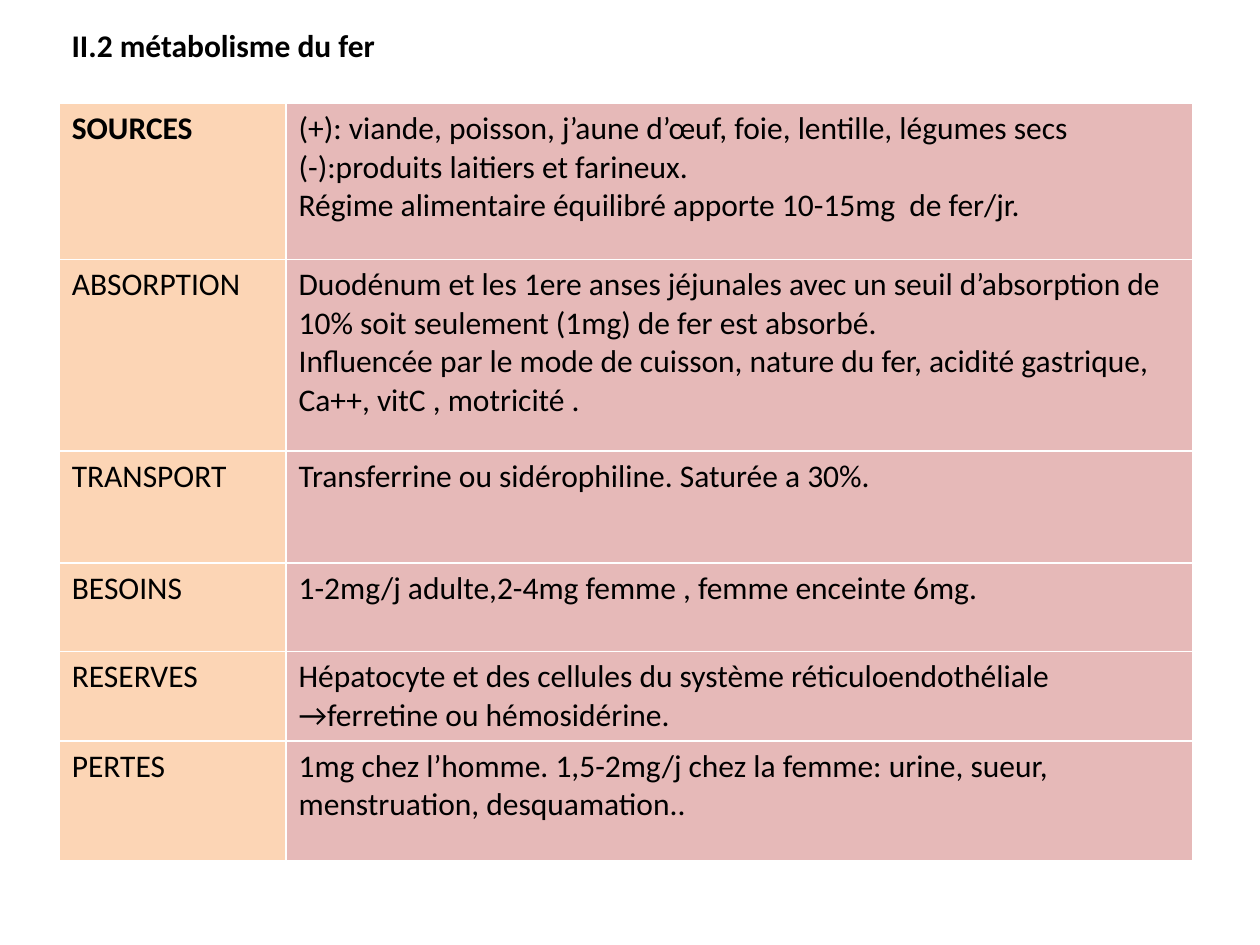
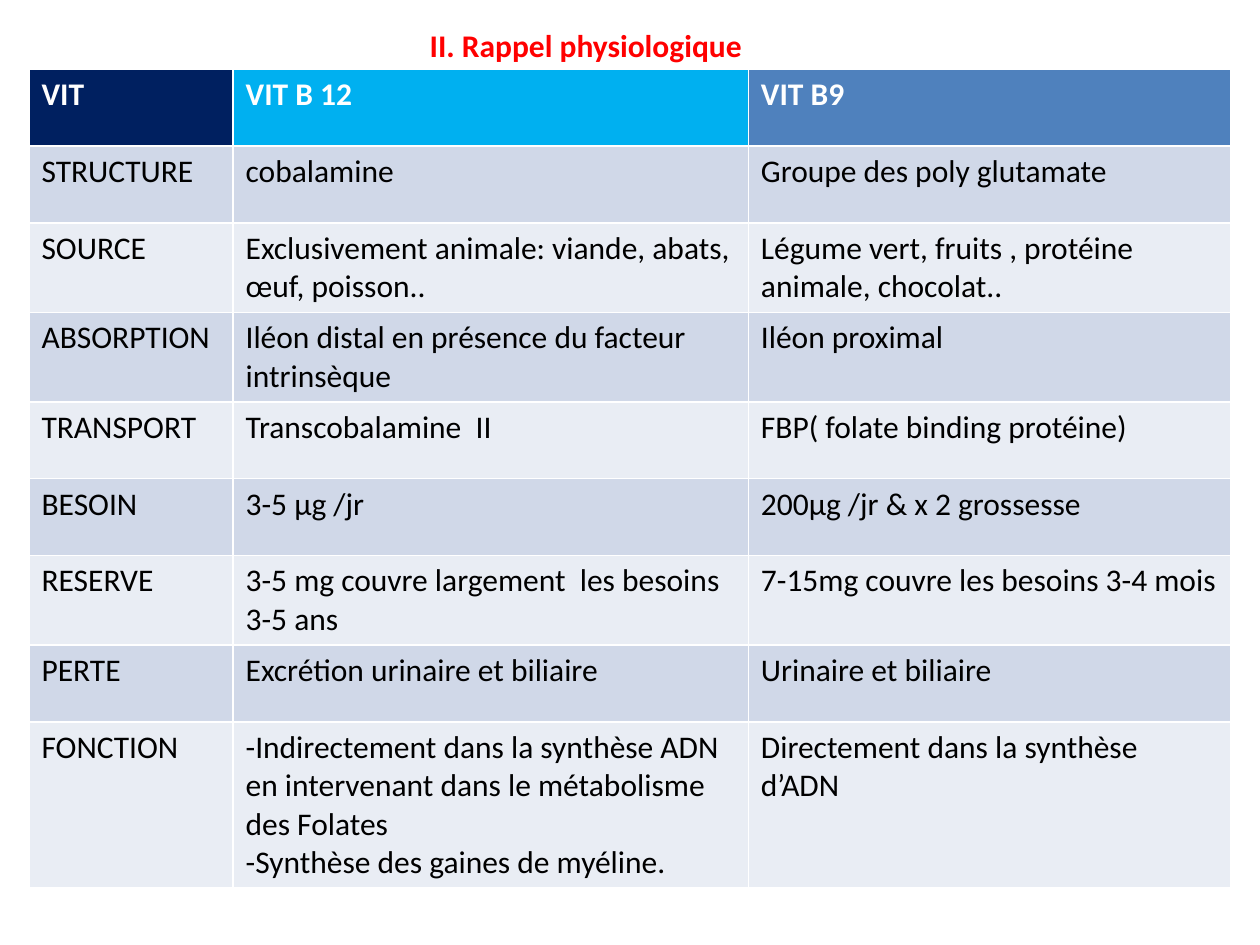
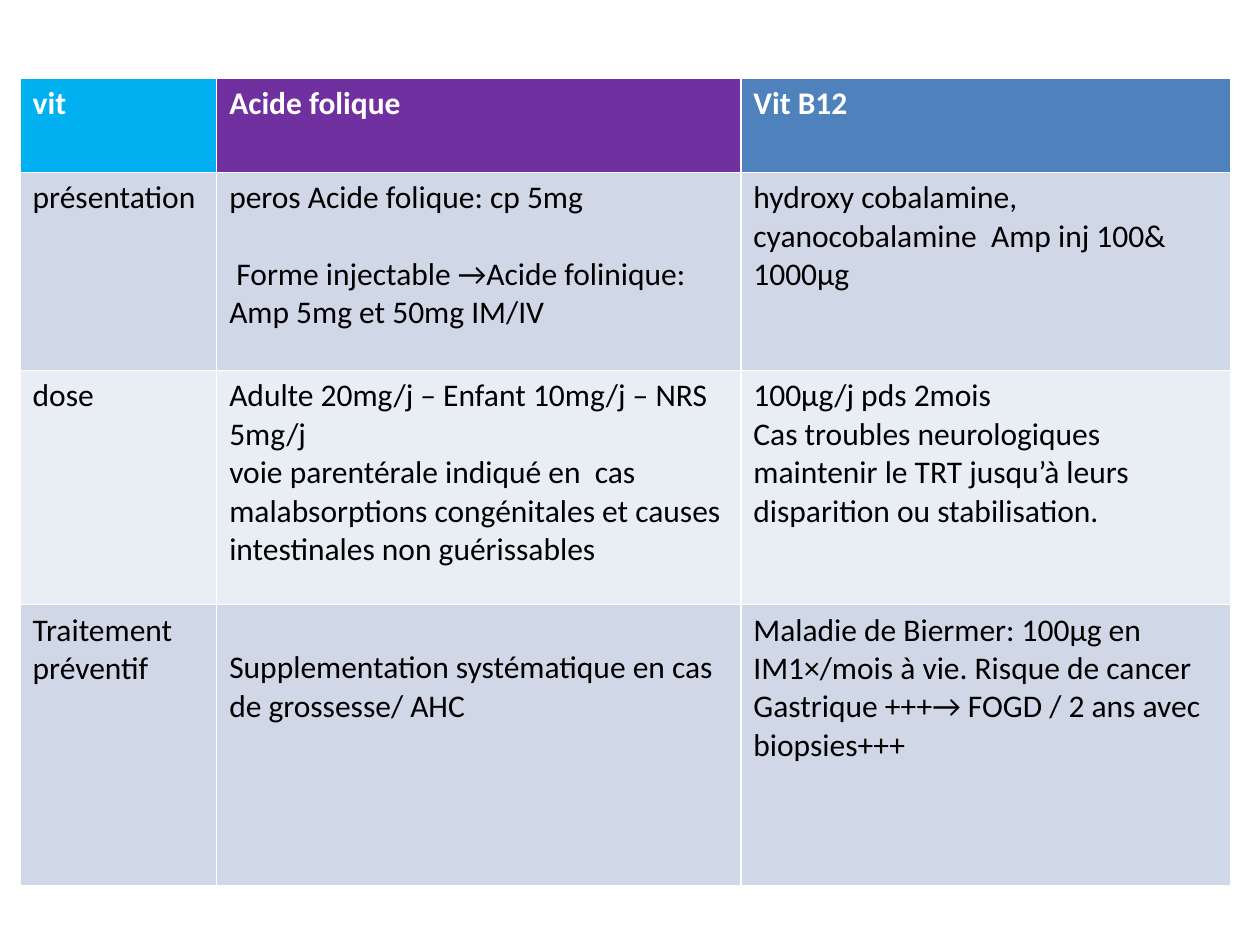
import dataclasses
import itertools
import typing

import pptx
import pptx.dml.color
import pptx.enum.text
import pptx.util

PX = 9144
FONT = "Calibri"
LINE_GAP = 30
CELL_TOP = 5

BLACK = pptx.dml.color.RGBColor(0x00, 0x00, 0x00)
WHITE = pptx.dml.color.RGBColor(0xFF, 0xFF, 0xFF)
RED = pptx.dml.color.RGBColor(0xFF, 0x00, 0x00)
PEACH = pptx.dml.color.RGBColor(0xFC, 0xD5, 0xB5)
ROSE = pptx.dml.color.RGBColor(0xE6, 0xB9, 0xB8)
NAVY = pptx.dml.color.RGBColor(0x00, 0x20, 0x60)
SKY = pptx.dml.color.RGBColor(0x00, 0xB0, 0xF0)
STEEL = pptx.dml.color.RGBColor(0x4F, 0x81, 0xBD)
PURPLE = pptx.dml.color.RGBColor(0x70, 0x30, 0xA0)
BAND_DARK = pptx.dml.color.RGBColor(0xD0, 0xD8, 0xE8)
BAND_LIGHT = pptx.dml.color.RGBColor(0xE9, 0xED, 0xF4)

Fills = tuple[pptx.dml.color.RGBColor, ...]
VITAMIN_BANDS = ((BAND_DARK,) * 3, (BAND_LIGHT,) * 3)


class Entry(typing.NamedTuple):
    lines: tuple[str, ...]
    top_gap: int = 0
    line_gap: int = 0


@dataclasses.dataclass(frozen=True)
class Title:
    text: str
    left: int
    width: int
    color: pptx.dml.color.RGBColor
    inset: int = 10


@dataclasses.dataclass(frozen=True)
class Grid:
    left: int
    top: int
    widths: tuple[int, ...]
    heights: tuple[int, ...]
    header_fills: Fills
    bands: tuple[Fills, ...]
    rows: tuple[tuple[str | Entry, ...], ...]
    header_color: pptx.dml.color.RGBColor = WHITE
    bold_columns: int = 3


@dataclasses.dataclass(frozen=True)
class Page:
    grid: Grid
    title: Title | None = None


PAGES = (
    Page(
        Grid(
            47, 82, (180, 720), (124, 152, 89, 70, 70, 95),
            (PEACH, ROSE), ((PEACH, ROSE),),
            (
                ("SOURCES", Entry((
                    "(+): viande, poisson, j’aune d’œuf, foie, lentille, légumes secs",
                    "(-):produits laitiers et farineux.",
                    "Régime alimentaire équilibré apporte 10-15mg  de fer/jr.",
                ))),
                ("ABSORPTION", Entry((
                    "Duodénum et les 1ere anses jéjunales avec un seuil d’absorption de "
                    "10% soit seulement (1mg) de fer est absorbé.",
                    "Influencée par le mode de cuisson, nature du fer, acidité gastrique, "
                    "Ca++, vitC , motricité .",
                ))),
                ("TRANSPORT", "Transferrine ou sidérophiline. Saturée a 30%."),
                ("BESOINS", "1-2mg/j adulte,2-4mg femme , femme enceinte 6mg."),
                ("RESERVES", "Hépatocyte et des cellules du système réticuloendothéliale "
                             "→ferretine ou hémosidérine."),
                ("PERTES", "1mg chez l’homme. 1,5-2mg/j chez la femme: urine, sueur, "
                           "menstruation, desquamation.."),
            ),
            header_color=BLACK,
            bold_columns=1,
        ),
        Title("II.2 métabolisme du fer", 47, 617, BLACK),
    ),
    Page(
        Grid(
            23, 55, (162, 409, 383), (61, 61, 71, 71, 61, 61, 71, 61, 132),
            (NAVY, SKY, STEEL), VITAMIN_BANDS,
            (
                ("VIT", "VIT B 12", "VIT B9"),
                ("STRUCTURE", "cobalamine", "Groupe des poly glutamate"),
                ("SOURCE", "Exclusivement animale: viande, abats, œuf, poisson..",
                 "Légume vert, fruits , protéine animale, chocolat.."),
                ("ABSORPTION", "Iléon distal en présence du facteur intrinsèque",
                 "Iléon proximal"),
                ("TRANSPORT", "Transcobalamine  II", "FBP( folate binding protéine)"),
                ("BESOIN", "3-5 µg /jr", "200µg /jr & x 2 grossesse"),
                ("RESERVE", "3-5 mg couvre largement  les besoins 3-5 ans",
                 "7-15mg couvre les besoins 3-4 mois"),
                ("PERTE", "Excrétion urinaire et biliaire", "Urinaire et biliaire"),
                ("FONCTION", Entry((
                    "-Indirectement dans la synthèse ADN en intervenant dans le "
                    "métabolisme des Folates",
                    "-Synthèse des gaines de myéline.",
                )), "Directement dans la synthèse d’ADN"),
            ),
        ),
        Title("II. Rappel physiologique", 117, 492, RED, inset=224),
    ),
    Page(
        Grid(
            16, 62, (156, 416, 389), (75, 157, 186, 223),
            (SKY, PURPLE, STEEL), VITAMIN_BANDS,
            (
                ("vit", "Acide folique", "Vit B12"),
                ("présentation", Entry((
                    "peros Acide folique: cp 5mg",
                    " Forme injectable →Acide folinique: Amp 5mg et 50mg IM/IV",
                ), line_gap=LINE_GAP),
                 "hydroxy cobalamine, cyanocobalamine  Amp inj 100& 1000µg"),
                ("dose", Entry((
                    "Adulte 20mg/j – Enfant 10mg/j – NRS 5mg/j",
                    "voie parentérale indiqué en  cas malabsorptions congénitales et "
                    "causes intestinales non guérissables",
                )), Entry((
                    "100µg/j pds 2mois",
                    "Cas troubles neurologiques maintenir le TRT jusqu’à leurs "
                    "disparition ou stabilisation.",
                ))),
                ("Traitement préventif",
                 Entry(("Supplementation systématique en cas de grossesse/ AHC",),
                       top_gap=LINE_GAP),
                 "Maladie de Biermer: 100μg en IM1×/mois à vie. Risque de cancer "
                 "Gastrique +++→ FOGD / 2 ans avec biopsies+++"),
            ),
        ),
    ),
)


def px(length: int) -> pptx.util.Emu:
    return pptx.util.Emu(length * PX)


def write(frame: typing.Any, entry: Entry, color: pptx.dml.color.RGBColor,
          bold: bool) -> None:
    style = {"name": FONT, "size": pptx.util.Pt(18), "bold": bold}
    for index, line in enumerate(entry.lines):
        para = frame.add_paragraph() if index else frame.paragraphs[0]
        if index and entry.line_gap:
            para.space_before = px(entry.line_gap)
        span = para.add_run()
        span.text = line
        for name, value in style.items():
            setattr(span.font, name, value)
        span.font.color.rgb = color


def draw_grid(page: typing.Any, grid: Grid) -> None:
    table = page.shapes.add_table(
        len(grid.heights), len(grid.widths), px(grid.left), px(grid.top),
        px(sum(grid.widths)), px(sum(grid.heights))).table
    for column, width in zip(table.columns, grid.widths):
        column.width = px(width)
    fills = itertools.chain([grid.header_fills], itertools.cycle(grid.bands))
    for number, (row, height, entries, colors) in enumerate(
            zip(table.rows, grid.heights, grid.rows, fills)):
        row.height = px(height)
        header = number == 0
        for place, (cell, entry, fill) in enumerate(zip(row.cells, entries, colors)):
            if isinstance(entry, str):
                entry = Entry((entry,))
            cell.fill.solid()
            cell.fill.fore_color.rgb = fill
            cell.margin_top = px(CELL_TOP + entry.top_gap)
            write(cell.text_frame, entry, grid.header_color if header else BLACK,
                  header and place < grid.bold_columns)


def draw_title(page: typing.Any, title: Title) -> None:
    box = page.shapes.add_textbox(px(title.left), px(16), px(title.width), px(40))
    frame_format = {
        "word_wrap": True,
        "auto_size": pptx.enum.text.MSO_AUTO_SIZE.SHAPE_TO_FIT_TEXT,
        "margin_left": px(title.inset),
    }
    for name, value in frame_format.items():
        setattr(box.text_frame, name, value)
    write(box.text_frame, Entry((title.text,)), title.color, True)


def main() -> None:
    deck = pptx.Presentation()
    deck.slide_width = px(1000)
    deck.slide_height = px(750)
    for content in PAGES:
        page = deck.slides.add_slide(deck.slide_layouts[6])
        draw_grid(page, content.grid)
        if content.title:
            draw_title(page, content.title)
    deck.save("out.pptx")


if __name__ == "__main__":
    main()
